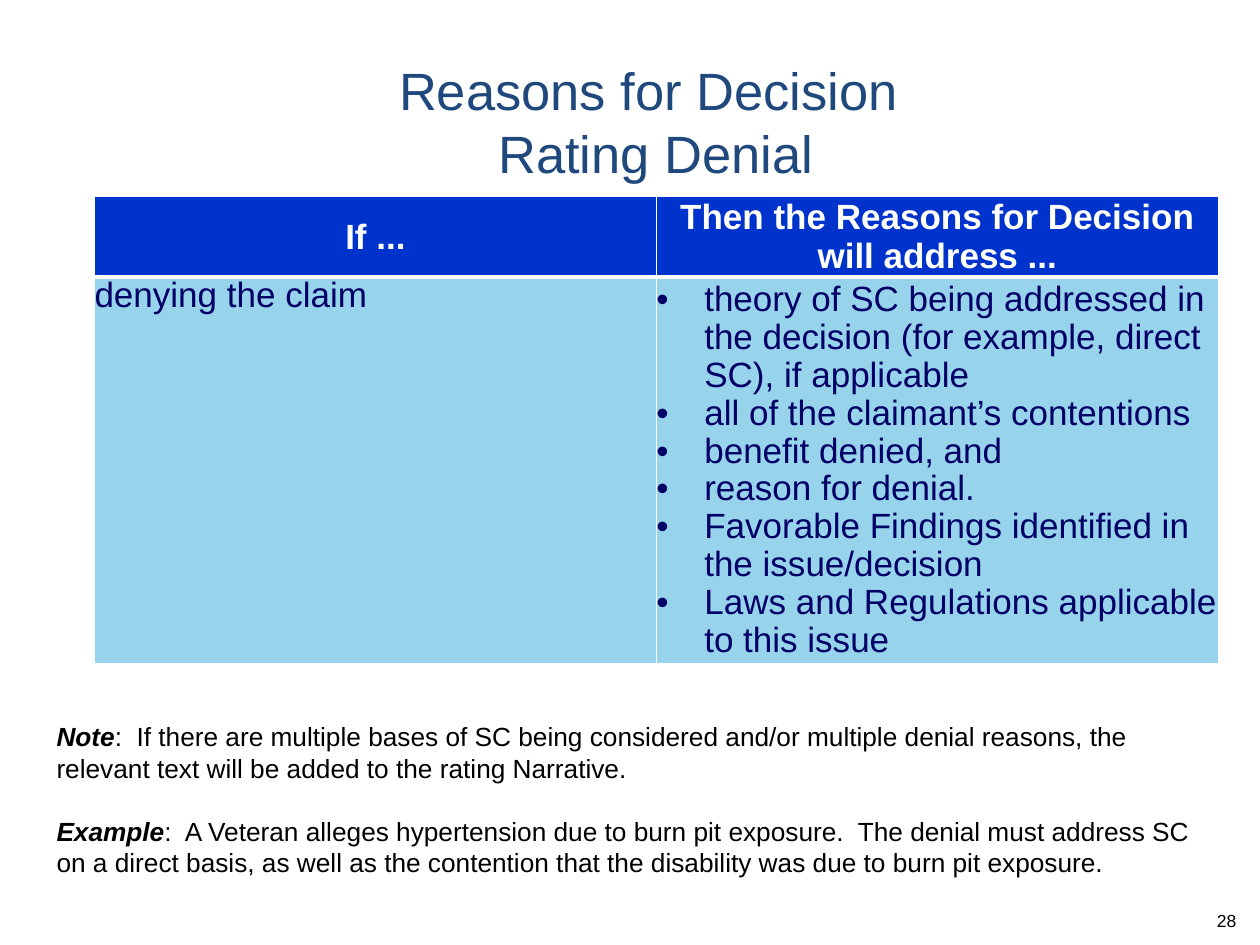
from lxml.etree import SubElement
from pptx import Presentation
from pptx.dml.color import RGBColor
from pptx.enum.text import MSO_ANCHOR, PP_ALIGN
from pptx.oxml.ns import qn
from pptx.util import Inches, Pt

TITLE = "Reasons for Decision \vRating Denial"
HEADS = ["If ...", "Then the Reasons for Decision will address ..."]
CLAIM = ["denying the claim"]
POINTS = [
    "theory of SC being addressed in the decision (for example, direct SC), if applicable",
    "all of the claimant’s contentions",
    "benefit denied, and",
    "reason for denial.",
    "Favorable Findings identified in the issue/decision",
    "Laws and Regulations applicable to this issue",
]
NOTES = [
    ("Note", ":  If there are multiple bases of SC being considered and/or multiple "
             "denial reasons, the relevant text will be added to the rating Narrative."),
    ("Example", ":  A Veteran alleges hypertension due to burn pit exposure.  The denial "
                "must address SC on a direct basis, as well as the contention that the "
                "disability was due to burn pit exposure."),
]
PAGE = "28"
WHITE, BLACK, NAVY = "FFFFFF", "000000", "000066"
EDGES = {"a:lnL": 1, "a:lnR": 1, "a:lnT": 1, "a:lnB": 1}


def color(code):
    return RGBColor.from_string(code)


def style(para, size, code, bold=False, align=PP_ALIGN.LEFT):
    para.alignment = align
    font = para.font
    font.name, font.size, font.bold = "Arial", Pt(size), bold
    font.color.rgb = color(code)


def bullet(para):
    props = para._p.get_or_add_pPr()
    props.set("marL", str(Inches(0.38)))
    props.set("indent", str(Inches(-0.38)))
    SubElement(props, qn("a:buFont"), typeface="Arial")
    SubElement(props, qn("a:buChar"), char="•")


def paint(cell, code, edges):
    """Give a cell its white borders, fill and zero margins."""
    props = cell._tc.get_or_add_tcPr()
    for tag, width in edges.items():
        line = SubElement(props, qn(tag), w=str(Pt(width)))
        SubElement(SubElement(line, qn("a:solidFill")), qn("a:srgbClr"), val=WHITE)
    cell.fill.solid()
    cell.fill.fore_color.rgb = color(code)
    cell.margin_left = cell.margin_right = cell.margin_top = cell.margin_bottom = 0


def lines(frame, count):
    """Return the first paragraph and as many new ones as needed."""
    return [frame.paragraphs[0]] + [frame.add_paragraph() for _ in range(count - 1)]


def add_title(slide):
    title = slide.shapes.title
    title.left, title.top = Inches(1.04), Inches(0.41)
    title.width, title.height = Inches(8.33), Inches(0.96)
    frame = title.text_frame
    frame.text = TITLE
    frame.vertical_anchor = MSO_ANCHOR.TOP
    para = frame.paragraphs[0]
    para.line_spacing = Pt(36)
    style(para, 30, "1F497D", align=PP_ALIGN.CENTER)


def add_grid(slide):
    heights = [0.64, 3.07]
    grid = slide.shapes.add_table(2, 2, Inches(0.75), Inches(1.56),
                                  Inches(8.92), Inches(sum(heights))).table
    for row, height in zip(grid.rows, heights):
        row.height = Inches(height)
    for col, head in enumerate(HEADS):
        cell = grid.cell(0, col)
        paint(cell, "0033CC", EDGES | {"a:lnB": 3})
        cell.text = head
        cell.vertical_anchor = MSO_ANCHOR.MIDDLE
        style(cell.text_frame.paragraphs[0], 20, WHITE, True, PP_ALIGN.CENTER)
    for col, items in enumerate([CLAIM, POINTS]):
        cell = grid.cell(1, col)
        paint(cell, "97D3EB", EDGES | {"a:lnT": 3})
        cell.vertical_anchor = MSO_ANCHOR.MIDDLE if col else MSO_ANCHOR.TOP
        for para, item in zip(lines(cell.text_frame, len(items)), items):
            para.text = item
            para.line_spacing = 0.97
            if col:
                bullet(para)
            style(para, 20, NAVY)


def add_box(slide, left, top, width, height):
    frame = slide.shapes.add_textbox(*map(Inches, (left, top, width, height))).text_frame
    frame.word_wrap = True
    return frame


def add_notes(slide):
    frame = add_box(slide, 0.35, 5.67, 9.48, 1.33)
    for num, (para, (label, body)) in enumerate(zip(lines(frame, len(NOTES)), NOTES)):
        para.line_spacing = Pt(18)
        para.space_before = Pt(18 if num else 0)
        style(para, 15, BLACK)
        lead = para.add_run()
        lead.text = label
        lead.font.bold = lead.font.italic = True
        para.add_run().text = body


def add_page(slide):
    frame = add_box(slide, 7.58, 7.22, 2.33, 0.4)
    frame.margin_top = 0
    frame.text = PAGE
    style(frame.paragraphs[0], 10, BLACK, align=PP_ALIGN.RIGHT)


def main():
    deck = Presentation()
    deck.slide_width, deck.slide_height = Inches(10), Inches(7.5)
    slide = deck.slides.add_slide(deck.slide_layouts[5])
    for add in (add_title, add_grid, add_notes, add_page):
        add(slide)
    deck.save("out.pptx")


if __name__ == "__main__":
    main()
